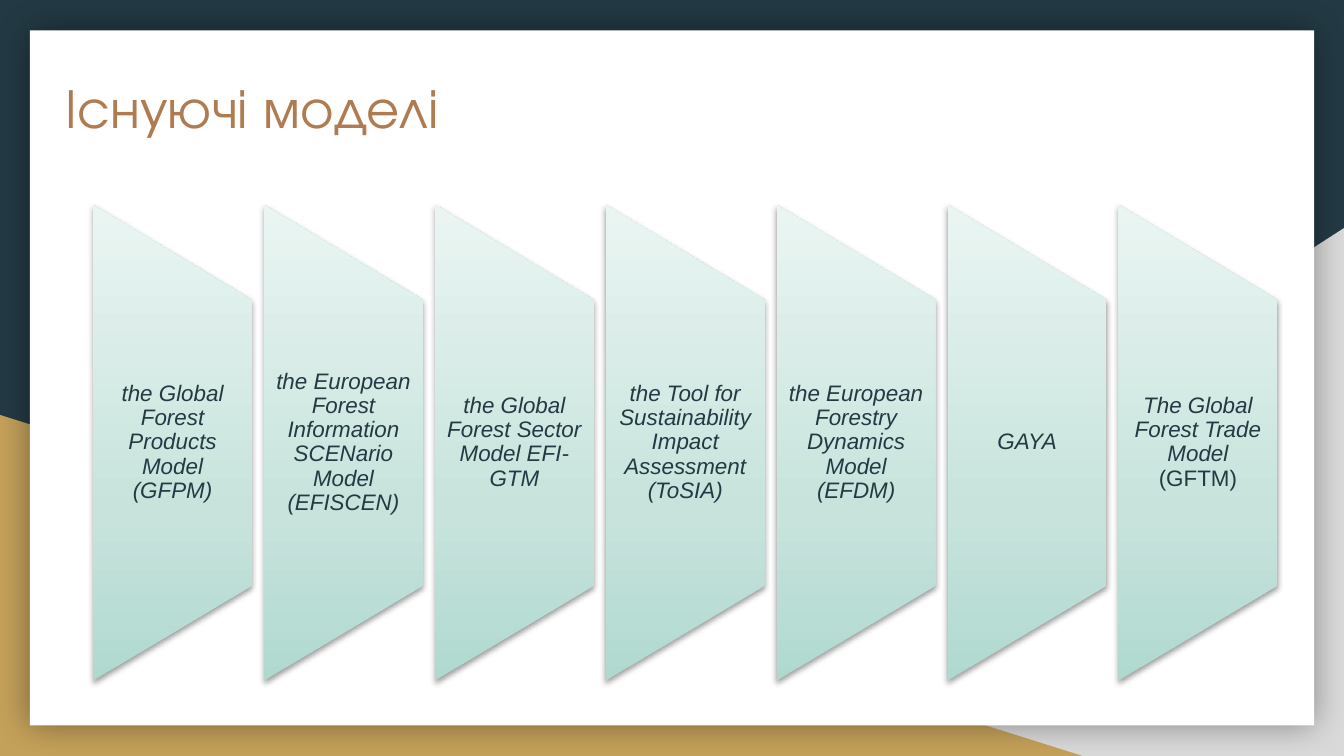
import pptx
import pptx.util
import pptx.dml.color
import pptx.enum.shapes
import pptx.enum.text
import pptx.oxml
import pptx.oxml.ns

Pt = pptx.util.Pt
SHAPE = pptx.enum.shapes.MSO_SHAPE
ALIGN = pptx.enum.text.PP_ALIGN
ANCHOR = pptx.enum.text.MSO_ANCHOR

TITLE = "Існуючі моделі"
# Each model is a list of (text, italic) runs.
MODELS = [
    [("the Global Forest Products Model (GFPM)", True)],
    [("the European Forest Information SCENario Model (EFISCEN)", True)],
    [("the Global Forest Sector Model EFI-GTM", True)],
    [("the Tool for Sustainability Impact Assessment (ToSIA)", True)],
    [("the European Forestry Dynamics Model (EFDM)", True)],
    [("GAYA", True)],
    [("The Global Forest Trade Model", True), (" (GFTM)", False)],
]
COLORS = {"dark": "233A44", "grey": "D9D9D9", "gold": "C4A15A", "panel": "FFFFFF",
          "title": "AF7B51", "black": "000000"}
GRADIENT = [(0, "AFD9CF"), (35, "C7E3DC"), (100, "EAF5F2")]

SLIDE_W, SLIDE_H = 720, 405
BLADE_LEFT, BLADE_TOP, BLADE_W, BLADE_H, PITCH = 49.9, 109.7, 85.2, 254.9, 91.55
LABEL_H = 153


def rgb(name):
    return pptx.dml.color.RGBColor.from_string(COLORS[name])


def add_shape(kind, left, top, width, height, fill=None):
    s = slide.shapes.add_shape(kind, Pt(left), Pt(top), Pt(width), Pt(height))
    s.shadow.inherit = False
    s.line.fill.background()
    if fill:
        s.fill.solid()
        s.fill.fore_color.rgb = rgb(fill)
    return s


def add_shadow(s, alpha, blur, dist=0, angle=0):
    effects = s._element.spPr.find(pptx.oxml.ns.qn("a:effectLst"))
    effects.append(pptx.oxml.parse_xml(
        f'<a:outerShdw {pptx.oxml.ns.nsdecls("a")} blurRad="{Pt(blur)}" dist="{Pt(dist)}" '
        f'dir="{angle * 60000}" algn="ctr" rotWithShape="0"><a:srgbClr val="{COLORS["black"]}">'
        f'<a:alpha val="{alpha * 1000}"/></a:srgbClr></a:outerShdw>'))


def fill_upward(s):
    """Run the gradient from bottom to top, whatever the shape's rotation."""
    stops = "".join(f'<a:gs pos="{pos * 1000}"><a:srgbClr val="{color}"/></a:gs>'
                    for pos, color in GRADIENT)
    s._element.spPr.find(pptx.oxml.ns.qn("a:prstGeom")).addnext(pptx.oxml.parse_xml(
        f'<a:gradFill {pptx.oxml.ns.nsdecls("a")} rotWithShape="0"><a:gsLst>{stops}</a:gsLst>'
        '<a:lin ang="16200000" scaled="0"/></a:gradFill>'))


def add_text(runs, left, top, width, height, *, font, size, color, insets,
             align=ALIGN.LEFT, anchor=ANCHOR.TOP, spacing=1.0):
    tf = slide.shapes.add_textbox(Pt(left), Pt(top), Pt(width), Pt(height)).text_frame
    tf.word_wrap = True
    tf.vertical_anchor = anchor
    tf.margin_left = tf.margin_right = Pt(insets[0])
    tf.margin_top = tf.margin_bottom = Pt(insets[1])
    p = tf.paragraphs[0]
    p.alignment = align
    p.line_spacing = spacing
    for text, italic in runs:
        r = p.add_run()
        r.text = text
        r.font.name = font
        r.font.size = Pt(size)
        r.font.italic = italic
        r.font.color.rgb = rgb(color)


prs = pptx.Presentation()
prs.slide_width, prs.slide_height = Pt(SLIDE_W), Pt(SLIDE_H)
slide = prs.slides.add_slide(prs.slide_layouts[6])
slide.background.fill.solid()
slide.background.fill.fore_color.rgb = rgb("dark")

corner = add_shape(SHAPE.RIGHT_TRIANGLE, 282, 122.2, 438, 282.8, "grey")
corner._element.spPr.get_or_add_xfrm().set("flipH", "1")
add_shape(SHAPE.RIGHT_TRIANGLE, 0, 222.3, 580, 182.7, "gold")
panel = add_shape(SHAPE.RECTANGLE, 16, 16.3, 688, 372.4, "panel")
add_shadow(panel, 40, 18)

add_text([(TITLE, False)], 28.1, 31.7, 591, 75, font="TeX Gyre Adventor", size=30,
         color="title", insets=(7.2, 7.2))

for i, runs in enumerate(MODELS):
    left = BLADE_LEFT + i * PITCH
    center_x, center_y = left + BLADE_W / 2, BLADE_TOP + BLADE_H / 2
    # The blade lies on its side, so its width and height swap before rotation.
    blade = add_shape(SHAPE.FLOWCHART_MANUAL_OPERATION, center_x - BLADE_H / 2,
                      center_y - BLADE_W / 2, BLADE_H, BLADE_W)
    blade.rotation = 270
    fill_upward(blade)
    add_shadow(blade, 38, 3.1, 1.6, 90)
    add_text(runs, left, center_y - LABEL_H / 2, BLADE_W, LABEL_H, font="Arial", size=12,
             color="dark", insets=(6, 0), align=ALIGN.CENTER, anchor=ANCHOR.MIDDLE,
             spacing=0.9)

prs.save("out.pptx")
